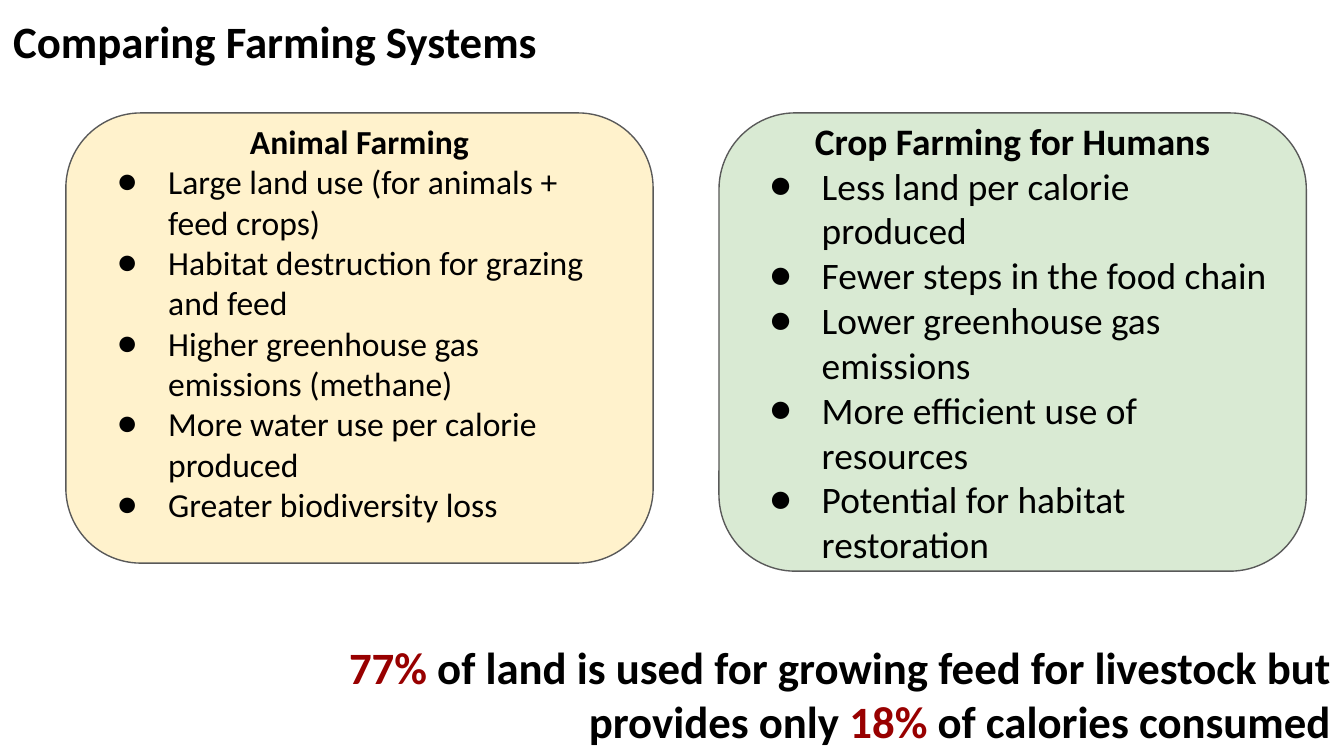
from pptx import Presentation
from pptx.dml.color import RGBColor
from pptx.enum.shapes import MSO_SHAPE
from pptx.enum.text import MSO_ANCHOR, PP_ALIGN
from pptx.oxml.xmlchemy import OxmlElement
from pptx.util import Inches, Pt

ROUNDED = MSO_SHAPE.ROUNDED_RECTANGLE
MIDDLE, TOP = MSO_ANCHOR.MIDDLE, MSO_ANCHOR.TOP
LEFT, CENTER, RIGHT = PP_ALIGN.LEFT, PP_ALIGN.CENTER, PP_ALIGN.RIGHT
COLORS = {
    "text": "000000",
    "accent": "980000",
    "outline": "595959",
    "animal": "FFF2CC",
    "crop": "D9EAD3",
}


def set_frame(shape, anchor=TOP, bottom=0.1):
    frame = shape.text_frame
    frame.word_wrap = True
    frame.vertical_anchor = anchor
    frame.margin_left = frame.margin_right = frame.margin_top = Inches(0.1)
    frame.margin_bottom = Inches(bottom)
    return frame


def add_text(para, text, size=24, bold=True, color="text", align=LEFT, hanging=None):
    para.alignment = align
    if hanging:
        properties = para._p.get_or_add_pPr()
        properties.set("marL", str(Inches(0.5)))
        properties.set("indent", str(-Inches(hanging)))
        bullet_color = OxmlElement("a:buClr")
        swatch = OxmlElement("a:srgbClr")
        swatch.set("val", COLORS[color])
        bullet_color.append(swatch)
        bullet_font = OxmlElement("a:buFont")
        bullet_font.set("typeface", "Calibri")
        bullet = OxmlElement("a:buChar")
        bullet.set("char", "●")
        properties.extend([bullet_color, bullet_font, bullet])
    span = para.add_run()
    span.text = text
    span.font.name = "Calibri"
    span.font.size = Pt(size)
    span.font.bold = bold
    span.font.color.rgb = RGBColor.from_string(COLORS[color])


deck = Presentation()
deck.slide_width = Inches(10)
deck.slide_height = Inches(10 * 9 / 16)
page = deck.slides.add_slide(deck.slide_layouts[6])

title = page.shapes.add_textbox(0, 0, Inches(6), Inches(0.84))
add_text(set_frame(title).paragraphs[0], "Comparing Farming Systems")

cards = [
    ("crop", 5.35, 3.41, 20, 0.39, 0.1, "Crop Farming for Humans", [
        "Less land per calorie produced",
        "Fewer steps in the food chain",
        "Lower greenhouse gas emissions",
        "More efficient use of resources",
        "Potential for habitat restoration",
    ]),
    ("animal", 0.49, 3.35, 18, 0.38, 0.33, "Animal Farming", [
        "Large land use (for animals + feed crops)",
        "Habitat destruction for grazing and feed",
        "Higher greenhouse gas emissions (methane)",
        "More water use per calorie produced",
        "Greater biodiversity loss",
    ]),
]
for fill, left, height, size, hanging, bottom, heading, points in cards:
    card = page.shapes.add_shape(ROUNDED, Inches(left), Inches(0.84), Inches(4.37), Inches(height))
    card.shadow.inherit = False
    card.fill.solid()
    card.fill.fore_color.rgb = RGBColor.from_string(COLORS[fill])
    card.line.color.rgb = RGBColor.from_string(COLORS["outline"])
    card.line.width = Pt(0.75)
    frame = set_frame(card, anchor=MIDDLE, bottom=bottom)
    add_text(frame.paragraphs[0], heading, size=size, align=CENTER)
    for point in points:
        add_text(frame.add_paragraph(), point, size=size, bold=False, hanging=hanging)

summary = page.shapes.add_textbox(Inches(1.97), Inches(4.66), Inches(8.03), Inches(1.01))
summary_para = set_frame(summary).paragraphs[0]
for text, color in [
    ("77%", "accent"),
    (" of land is used for growing feed for livestock but provides only ", "text"),
    ("18%", "accent"),
    (" of calories consumed", "text"),
]:
    add_text(summary_para, text, color=color, align=RIGHT)

deck.save("out.pptx")
